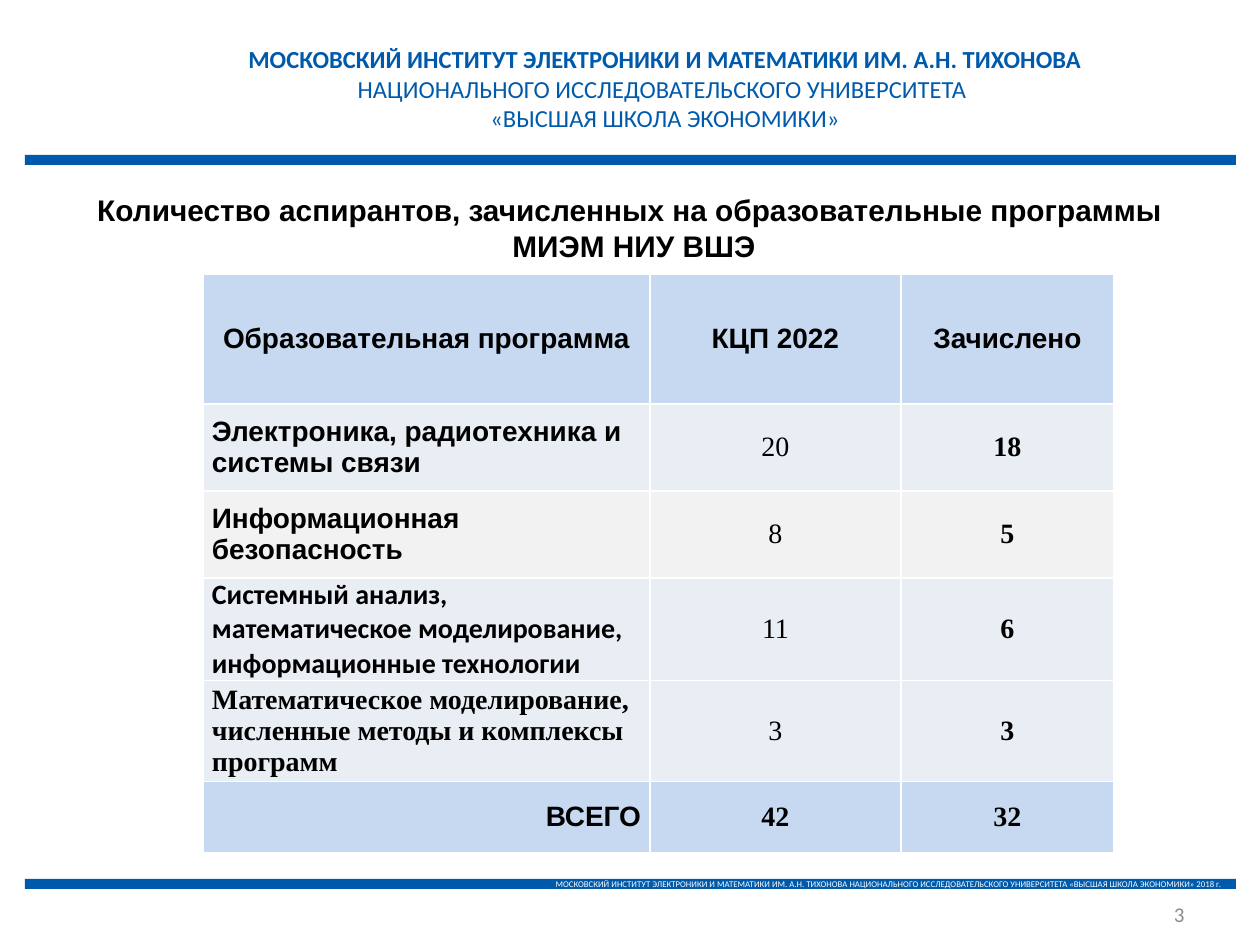
from dataclasses import dataclass

from lxml import etree
from pptx import Presentation
from pptx.dml.color import RGBColor
from pptx.enum.shapes import MSO_SHAPE
from pptx.enum.text import MSO_ANCHOR, MSO_AUTO_SIZE, PP_ALIGN
from pptx.oxml.ns import qn
from pptx.util import Pt

LEFT, CENTER, RIGHT = PP_ALIGN.LEFT, PP_ALIGN.CENTER, PP_ALIGN.RIGHT
MIDDLE, TOP = MSO_ANCHOR.MIDDLE, MSO_ANCHOR.TOP
NO_AUTOFIT = MSO_AUTO_SIZE.NONE
RECTANGLE = MSO_SHAPE.RECTANGLE

PIXELS_PER_INCH = 126
BLUE, WHITE, BLACK, GRAY = "005AAB", "FFFFFF", "000000", "8C8C8C"
HEADER_FILL, ROW_FILL, LIGHT_FILL = "C6D9F1", "E9EDF4", "F2F2F2"
SANS, BODY, SERIF = "Arial", "Calibri", "Times New Roman"


@dataclass
class Area:
    left: int
    top: int
    width: int
    height: int


@dataclass
class ProgramRow:
    name: str
    quota: str
    enrolled: str
    height: int
    fill: str = ROW_FILL
    name_font: str = SANS
    name_align: PP_ALIGN = LEFT
    number_font: str = SERIF
    quota_bold: bool = False


def px(length: int) -> int:
    return round(length * 914400 / PIXELS_PER_INCH)


def color(value: str) -> RGBColor:
    return RGBColor.from_string(value)


def write(para, text: str, *, font: str, size: int, fill: str,
          bold: bool = False, align: PP_ALIGN = CENTER) -> None:
    """Fill a paragraph; a newline in the text becomes a line break."""
    para.alignment = align
    for number, line in enumerate(text.split("\n")):
        if number:
            para.add_line_break()
        span = para.add_run()
        span.text = line
        span.font.name, span.font.size, span.font.bold = font, Pt(size), bold
        span.font.color.rgb = color(fill)


def place(shape, area: Area) -> None:
    shape.left, shape.top = px(area.left), px(area.top)
    shape.width, shape.height = px(area.width), px(area.height)


def set_frame(shape, anchor: MSO_ANCHOR):
    frame = shape.text_frame
    frame.word_wrap = True
    frame.auto_size = NO_AUTOFIT
    frame.vertical_anchor = anchor
    return frame


def add_box(page, area: Area, anchor: MSO_ANCHOR):
    box = page.shapes.add_textbox(0, 0, 0, 0)
    place(box, area)
    return set_frame(box, anchor)


def add_bar(page, top: int):
    bar = page.shapes.add_shape(RECTANGLE, 0, 0, 0, 0)
    place(bar, Area(25, top, 1211, 10))
    bar.shadow.inherit = False
    bar.fill.solid()
    bar.fill.fore_color.rgb = color(BLUE)
    bar.line.fill.background()
    return set_frame(bar, MIDDLE)


def add_borders(cell) -> None:
    properties = cell._tc.get_or_add_tcPr()
    for side in ("lnL", "lnR", "lnT", "lnB"):
        line = etree.SubElement(properties, qn(f"a:{side}"), w=str(Pt(1)))
        solid = etree.SubElement(line, qn("a:solidFill"))
        etree.SubElement(solid, qn("a:srgbClr"), val=WHITE)


def fill_cell(cell, text: str, fill: str, margin: int, font: str,
              bold: bool, align: PP_ALIGN = CENTER) -> None:
    add_borders(cell)
    cell.fill.solid()
    cell.fill.fore_color.rgb = color(fill)
    cell.vertical_anchor = MIDDLE
    cell.margin_left = cell.margin_right = px(margin)
    cell.margin_top = cell.margin_bottom = 0
    write(cell.text_frame.paragraphs[0], text, font=font, size=16,
          fill=BLACK, bold=bold, align=align)


def add_program_table(page, left: int, top: int, widths: list[int],
                      rows: list[ProgramRow]) -> None:
    height = sum(row.height for row in rows)
    table = page.shapes.add_table(len(rows), len(widths), px(left), px(top),
                                  px(sum(widths)), px(height)).table
    table.first_row = table.horz_banding = False
    for column, width in zip(table.columns, widths):
        column.width = px(width)
    for index, row in enumerate(rows):
        table.rows[index].height = px(row.height)
        name, quota, enrolled = table.rows[index].cells
        fill_cell(name, row.name, row.fill, 9, row.name_font, True,
                  row.name_align)
        fill_cell(quota, row.quota, row.fill, 9, row.number_font,
                  row.quota_bold)
        fill_cell(enrolled, row.enrolled, row.fill, 0, row.number_font, True)


PROGRAMS = [
    ProgramRow("Образовательная программа", "КЦП 2022", "Зачислено", 130,
               HEADER_FILL, name_align=CENTER, number_font=SANS,
               quota_bold=True),
    ProgramRow("Электроника, радиотехника и системы связи", "20", "18", 87),
    ProgramRow("Информационная безопасность", "8", "5", 87, LIGHT_FILL),
    ProgramRow("Системный анализ, математическое моделирование, "
               "информационные технологии", "11", "6", 101, name_font=BODY),
    ProgramRow("Математическое моделирование, численные методы и комплексы "
               "программ", "3", "3", 101, name_font=SERIF),
    ProgramRow("ВСЕГО", "42", "32", 71, HEADER_FILL, name_align=RIGHT,
               quota_bold=True),
]


def main() -> None:
    deck = Presentation()
    deck.slide_width, deck.slide_height = px(1260), px(945)
    page = deck.slides.add_slide(deck.slide_layouts[5])

    # Title
    title = page.shapes.title
    place(title, Area(54, 185, 1160, 85))
    write(set_frame(title, MIDDLE).paragraphs[0],
          "Количество аспирантов, зачисленных на образовательные программы \n"
          "МИЭМ НИУ ВШЭ", font=SANS, size=17, fill=BLACK, bold=True)

    # Institute header and bars
    add_bar(page, 155)
    footer = add_bar(page, 879)
    write(footer.paragraphs[0],
          "МОСКОВСКИЙ ИНСТИТУТ ЭЛЕКТРОНИКИ И МАТЕМАТИКИ ИМ. А.Н. ТИХОНОВА "
          "НАЦИОНАЛЬНОГО ИССЛЕДОВАТЕЛЬСКОГО УНИВЕРСИТЕТА "
          "«ВЫСШАЯ ШКОЛА ЭКОНОМИКИ» 2018 г.",
          font=BODY, size=5, fill=WHITE, align=RIGHT)
    header = add_box(page, Area(234, 38, 862, 102), TOP)
    write(header.paragraphs[0],
          "МОСКОВСКИЙ ИНСТИТУТ ЭЛЕКТРОНИКИ И МАТЕМАТИКИ ИМ. А.Н. ТИХОНОВА",
          font=BODY, size=14, fill=BLUE, bold=True)
    write(header.add_paragraph(),
          "НАЦИОНАЛЬНОГО ИССЛЕДОВАТЕЛЬСКОГО УНИВЕРСИТЕТА \n"
          "«ВЫСШАЯ ШКОЛА ЭКОНОМИКИ»", font=BODY, size=14, fill=BLUE)

    # Enrolment table
    add_program_table(page, 203, 274, [447, 251, 213], PROGRAMS)

    # Page number
    number = add_box(page, Area(903, 900, 294, 28), MIDDLE)
    write(number.paragraphs[0], "3", font=BODY, size=12, fill=GRAY,
          align=RIGHT)

    deck.save("out.pptx")


if __name__ == "__main__":
    main()
